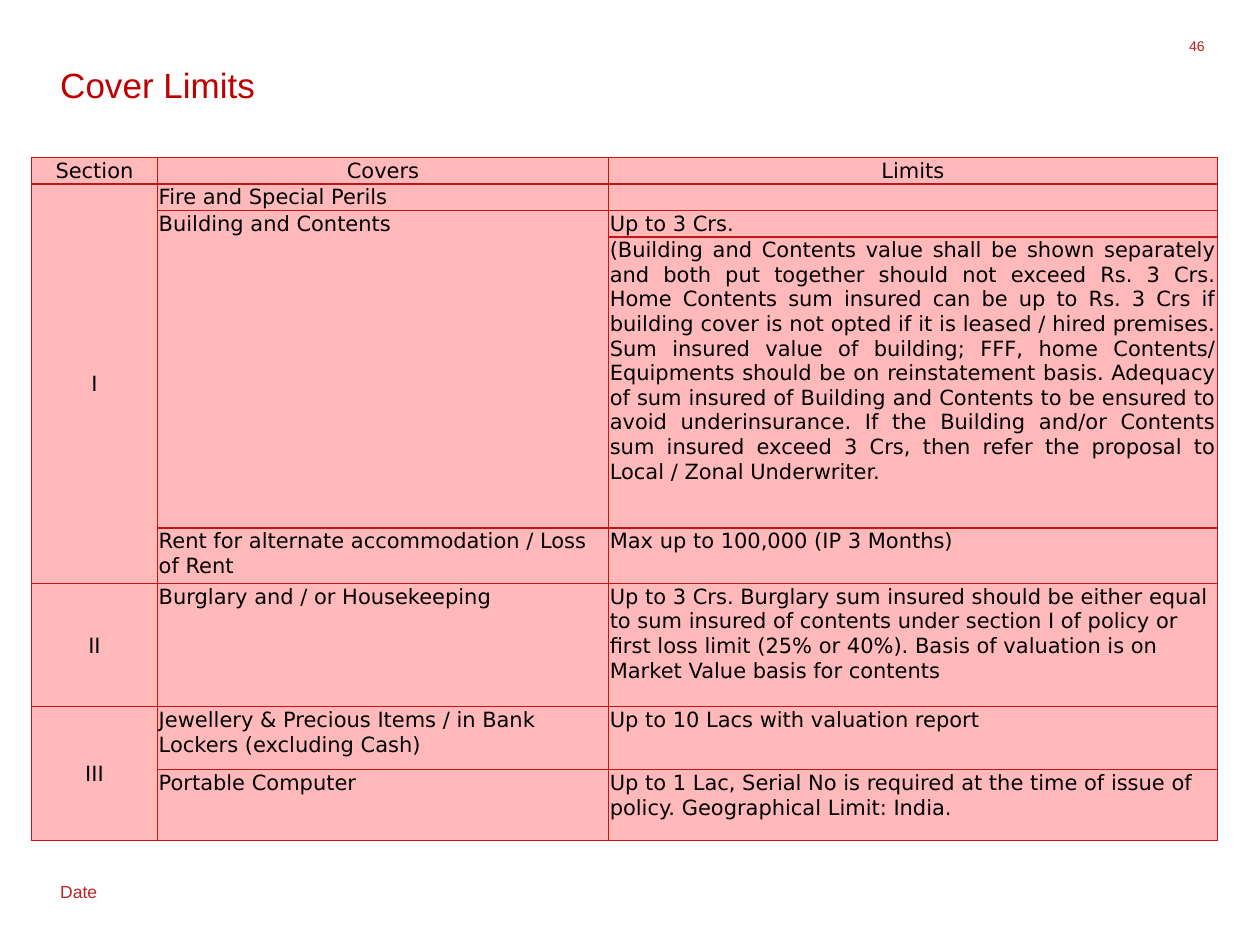
from lxml import etree
from pptx import Presentation
from pptx.dml.color import RGBColor
from pptx.enum.text import MSO_ANCHOR, PP_ALIGN
from pptx.oxml.ns import qn
from pptx.util import Inches, Pt

LEFT, CENTER, RIGHT, JUSTIFY = PP_ALIGN.LEFT, PP_ALIGN.CENTER, PP_ALIGN.RIGHT, PP_ALIGN.JUSTIFY
TOP, MIDDLE = MSO_ANCHOR.TOP, MSO_ANCHOR.MIDDLE

COLORS = {
    "title": "C00000",
    "date": "BE2328",
    "number": "C21B17",
    "border": "C21612",
    "cell": "FFB9BB",
    "text": "000000",
}

COL_WIDTHS = [1, 3.58, 4.83]
ROW_HEIGHTS = [0.2, 0.2, 0.2, 2.31, 0.44, 0.98, 0.5, 0.56]
ROWS = [
    ("Section", "Covers", "Limits"),
    ("I", "Fire and Special Perils", ""),
    ("", "Building and Contents", "Up to 3 Crs."),
    ("", "", "(Building and Contents value shall be shown separately and both put together "
             "should not exceed Rs. 3 Crs. Home Contents sum insured can be up to Rs. 3 Crs "
             "if building cover is not opted if it is leased / hired premises. Sum insured "
             "value of building; FFF, home Contents/ Equipments should be on reinstatement "
             "basis. Adequacy of sum insured of Building and Contents to be ensured to avoid "
             "underinsurance. If the Building and/or Contents sum insured exceed 3 Crs, then "
             "refer the proposal to Local / Zonal Underwriter."),
    ("", "Rent for alternate accommodation / Loss of Rent", "Max up to 100,000 (IP 3 Months)"),
    ("II", "Burglary and / or Housekeeping",
     "Up to 3 Crs. Burglary sum insured should be either equal to sum insured of contents "
     "under section I of policy or first loss limit (25% or 40%). Basis of valuation is on "
     "Market Value basis for contents"),
    ("III", "Jewellery & Precious Items / in Bank Lockers (excluding Cash)",
     "Up to 10 Lacs with valuation report"),
    ("", "Portable Computer",
     "Up to 1 Lac, Serial No is required at the time of issue of policy. "
     "Geographical Limit: India."),
]
MERGES = [((1, 0), (4, 0)), ((2, 1), (3, 1)), ((6, 0), (7, 0))]
JUSTIFIED = {(2, 2), (3, 2)}


class SlideBuilder:
    text_font = "Arial"
    table_font = "DejaVu Sans"
    table_size = 12
    border_width = 0.75

    def __init__(self, slide):
        self.slide = slide

    def style(self, p, font, size, color, align):
        p.alignment = align
        for r in p.runs:
            r.font.name = font
            r.font.size = Pt(size)
            r.font.color.rgb = RGBColor.from_string(COLORS[color])

    def text(self, text, box, size, color, align=LEFT, margins=(0.1, 0.05), wrap=True):
        sp = self.slide.shapes.add_textbox(*map(Inches, box))
        tf = sp.text_frame
        tf.word_wrap = wrap
        tf.margin_left = tf.margin_right = Inches(margins[0])
        tf.margin_top = tf.margin_bottom = Inches(margins[1])
        tf.text = text
        p = tf.paragraphs[0]
        self.style(p, self.text_font, size, color, align)
        return p

    def borders(self, cell):
        tc_pr = cell._tc.get_or_add_tcPr()
        for i, side in enumerate(("lnL", "lnR", "lnT", "lnB")):
            ln = etree.Element(qn(f"a:{side}"), w=str(Pt(self.border_width)))
            fill = etree.SubElement(ln, qn("a:solidFill"))
            etree.SubElement(fill, qn("a:srgbClr"), val=COLORS["border"])
            tc_pr.insert(i, ln)

    def cell(self, cell, text, align, anchor):
        cell.margin_left = cell.margin_right = cell.margin_top = Inches(0.01)
        cell.margin_bottom = 0
        cell.vertical_anchor = anchor
        cell.fill.solid()
        cell.fill.fore_color.rgb = RGBColor.from_string(COLORS["cell"])
        self.borders(cell)
        p = cell.text_frame.paragraphs[0]
        if text:
            p.text = text
        self.style(p, self.table_font, self.table_size, "text", align)
        end = etree.SubElement(p._p, qn("a:endParaRPr"), sz=str(self.table_size * 100))
        etree.SubElement(end, qn("a:latin"), typeface=self.table_font)

    def table(self, left, top):
        size = (sum(COL_WIDTHS), sum(ROW_HEIGHTS))
        frame = self.slide.shapes.add_table(
            len(ROWS), len(COL_WIDTHS), *map(Inches, (left, top, *size)))
        table = frame.table
        for column, width in zip(table.columns, COL_WIDTHS):
            column.width = Inches(width)
        for row, height in zip(table.rows, ROW_HEIGHTS):
            row.height = Inches(height)
        for i, texts in enumerate(ROWS):
            for j, text in enumerate(texts):
                align = CENTER if i == 0 or j == 0 else JUSTIFY if (i, j) in JUSTIFIED else LEFT
                anchor = MIDDLE if i and j == 0 else TOP
                self.cell(table.cell(i, j), text, align, anchor)
        for first, last in MERGES:
            table.cell(*first).merge(table.cell(*last))


def main():
    prs = Presentation()
    prs.slide_width, prs.slide_height = Inches(10), Inches(7.5)
    s = SlideBuilder(prs.slides.add_slide(prs.slide_layouts[6]))

    date = s.text("Date", (0.38, 6.92, 0.5, 0.28), 10, "date", wrap=False)
    date.line_spacing = 1.15
    date.space_after = Pt(10)
    s.text("46", (9.34, 0.3, 0.22, 0.2), 8, "number", RIGHT, margins=(0, 0))
    title = s.text("Cover Limits", (0.38, 0.48, 9.17, 0.57), 20, "title")
    title.line_spacing = Pt(22)
    s.table(0.25, 1.25)

    prs.save("out.pptx")


if __name__ == "__main__":
    main()
